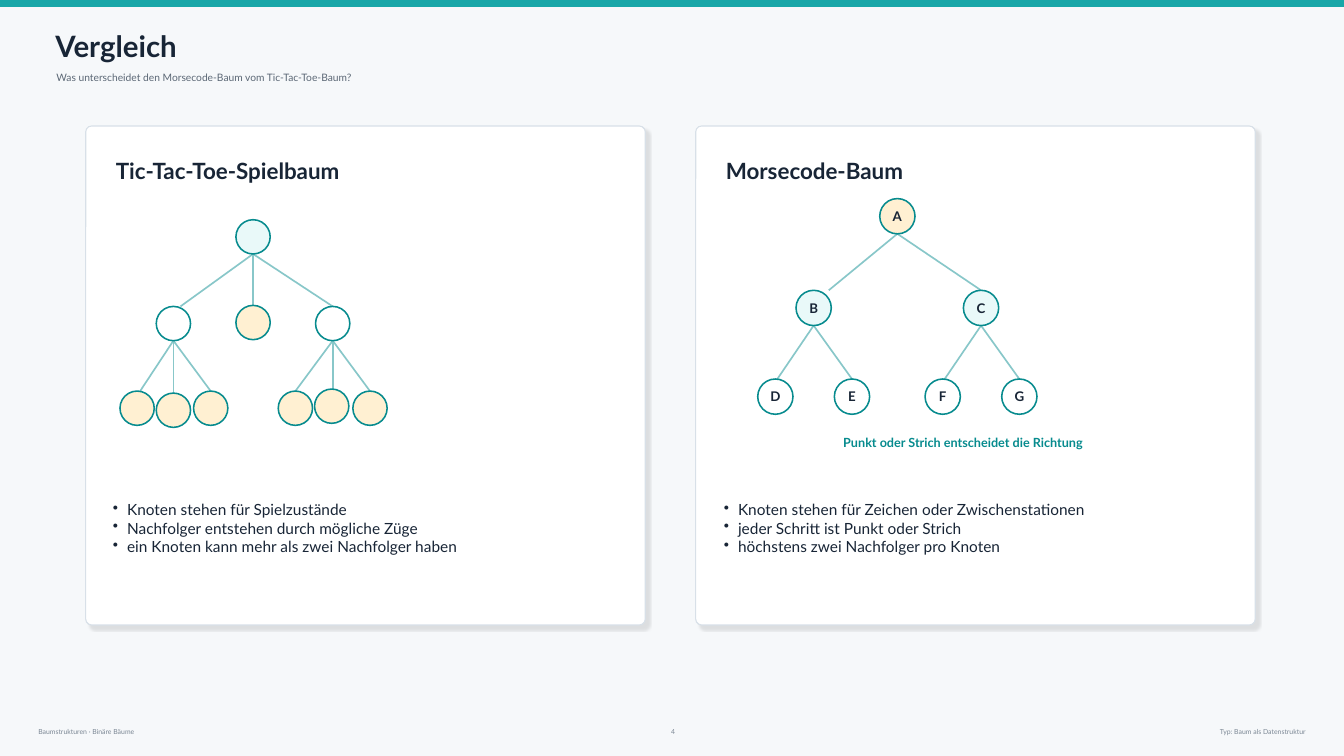
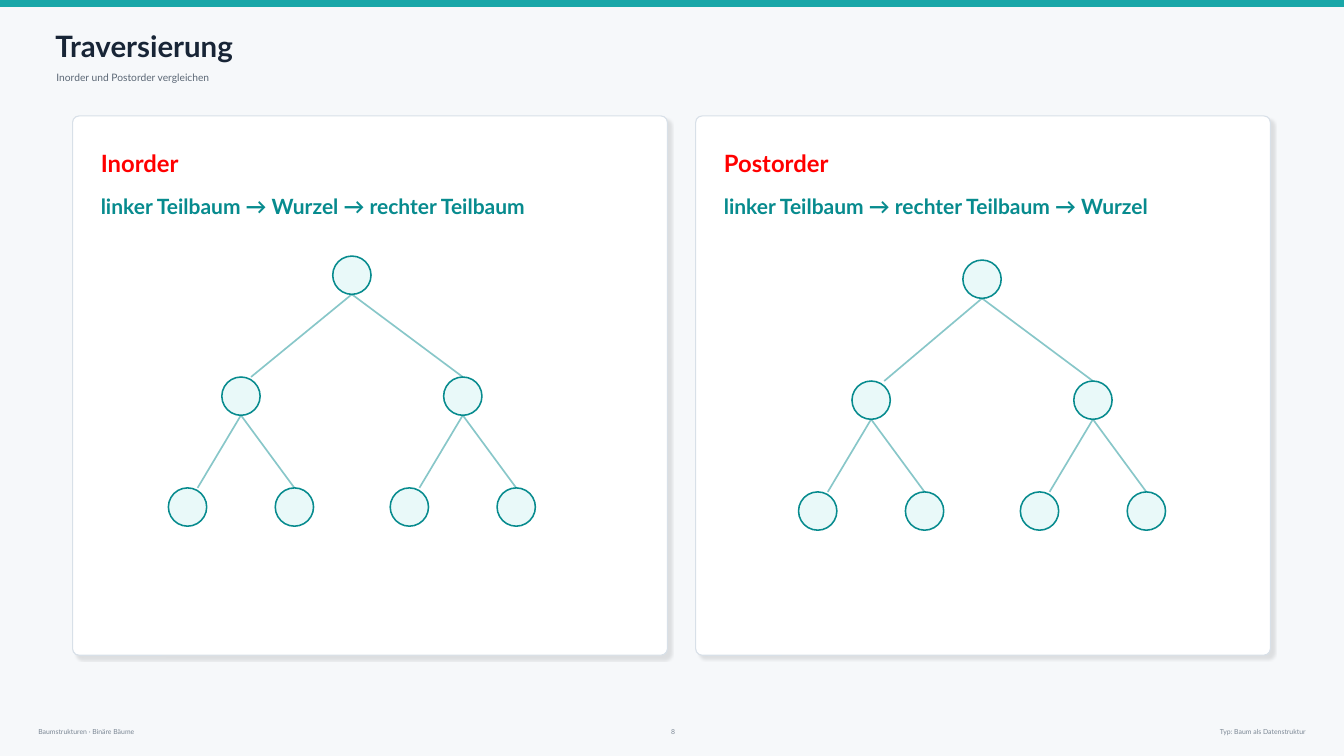
"""Build two slides that compare tree structures and traversal orders."""
from collections import namedtuple

from lxml import etree
from pptx import Presentation
from pptx.dml.color import RGBColor
from pptx.enum.shapes import MSO_CONNECTOR, MSO_SHAPE
from pptx.enum.text import MSO_ANCHOR, MSO_AUTO_SIZE, PP_ALIGN
from pptx.oxml.ns import qn
from pptx.util import Inches, Pt

LEFT, CENTER, RIGHT = PP_ALIGN.LEFT, PP_ALIGN.CENTER, PP_ALIGN.RIGHT
MIDDLE = MSO_ANCHOR.MIDDLE
NO_FIT = MSO_AUTO_SIZE.NONE
RECT, ROUNDED, OVAL = MSO_SHAPE.RECTANGLE, MSO_SHAPE.ROUNDED_RECTANGLE, MSO_SHAPE.OVAL
STRAIGHT = MSO_CONNECTOR.STRAIGHT

PAPER = RGBColor(0xF6, 0xF8, 0xFA)
TEAL = RGBColor(0x19, 0xA7, 0xA8)
DARK_TEAL = RGBColor(0x07, 0x8B, 0x8E)
EDGE = RGBColor(0x88, 0xC7, 0xC9)
MINT = RGBColor(0xE9, 0xF9, 0xF9)
CREAM = RGBColor(0xFF, 0xF0, 0xD2)
WHITE = RGBColor(0xFF, 0xFF, 0xFF)
BORDER = RGBColor(0xD8, 0xE0, 0xE8)
INK = RGBColor(0x18, 0x25, 0x36)
SLATE = RGBColor(0x5B, 0x67, 0x75)
GREY = RGBColor(0x7B, 0x87, 0x94)
RED = RGBColor(0xFF, 0x00, 0x00)

FONT = "Lato"
WIDTH, HEIGHT = 13.33, 7.5

Node = namedtuple("Node", "x y fill parent shift label", defaults=(None, 0, ""))


def write(tf, text, size=11, color=INK, bold=False, align=LEFT, bullet=False):
    """Fill a text frame with one paragraph for each line of text."""
    tf.word_wrap = True
    tf.auto_size = NO_FIT
    tf.vertical_anchor = MIDDLE
    tf.margin_left = tf.margin_right = tf.margin_top = tf.margin_bottom = 0
    for i, line in enumerate(text.split("\n")):
        p = tf.paragraphs[0] if i == 0 else tf.add_paragraph()
        p.alignment = align
        if bullet:
            pPr = p._p.get_or_add_pPr()
            pPr.set("marL", str(Inches(0.14)))
            pPr.set("indent", str(-Inches(0.14)))
            etree.SubElement(pPr, qn("a:buChar"), char="•")
        r = p.add_run()
        r.text = line
        r.font.name = FONT
        r.font.size = Pt(size)
        r.font.bold = bold
        r.font.color.rgb = color


class Deck:
    """Hold the shared style and the current slide."""

    def __init__(self):
        """Start an empty presentation with the shared background."""
        self.prs = Presentation()
        self.prs.slide_width = Inches(WIDTH)
        self.prs.slide_height = Inches(HEIGHT)
        fill = self.prs.slide_master.background.fill
        fill.solid()
        fill.fore_color.rgb = PAPER
        self.s = None

    def slide(self, title, subtitle, number):
        """Add a slide with band, title, subtitle and footer."""
        self.s = self.prs.slides.add_slide(self.prs.slide_layouts[5])
        self.shape(RECT, 0, 0, WIDTH, 0.06, TEAL, TEAL, 1)
        sp = self.s.shapes.title
        sp.left, sp.top = Inches(0.55), Inches(0.28)
        sp.width, sp.height = Inches(8.8), Inches(0.34)
        write(sp.text_frame, title, size=21, bold=True)
        self.text(subtitle, 0.56, 0.66, 8.8, 0.22, size=7.3, color=SLATE)
        for text, x, w, align in (
            ("Baumstrukturen · Binäre Bäume", 0.38, 3, LEFT),
            ("Typ: Baum als Datenstruktur", 11.3, 1.65, RIGHT),
            (number, 6.55, 0.25, CENTER),
        ):
            self.text(text, x, 7.18, w, 0.16, size=4.9, color=GREY, align=align)

    def text(self, text, x, y, w, h, **style):
        """Add a text box."""
        sp = self.s.shapes.add_textbox(Inches(x), Inches(y), Inches(w), Inches(h))
        write(sp.text_frame, text, **style)

    def shape(self, kind, x, y, w, h, fill, line, weight):
        """Add a filled, outlined shape without shadow."""
        sp = self.s.shapes.add_shape(kind, Inches(x), Inches(y), Inches(w), Inches(h))
        sp.shadow.inherit = False
        sp.fill.solid()
        sp.fill.fore_color.rgb = fill
        sp.line.color.rgb = line
        sp.line.width = Pt(weight)
        return sp

    def card(self, x, y, w, h):
        """Add a white rounded card with a soft shadow."""
        sp = self.shape(ROUNDED, x, y, w, h, WHITE, BORDER, 0.8)
        sp.adjustments[0] = 0.012
        effects = sp.element.spPr.find(qn("a:effectLst"))
        shadow = etree.SubElement(
            effects, qn("a:outerShdw"), blurRad=str(Pt(1.2)), dist=str(Pt(4)),
            dir=str(45 * 60000), algn="bl", rotWithShape="0")
        color = etree.SubElement(shadow, qn("a:srgbClr"), val="000000")
        etree.SubElement(color, qn("a:alpha"), val="10000")

    def edge(self, x1, y1, x2, y2):
        """Add a straight tree edge."""
        sp = self.s.shapes.add_connector(
            STRAIGHT, Inches(x1), Inches(y1), Inches(x2), Inches(y2))
        sp.line.color.rgb = EDGE
        sp.line.width = Pt(1.2)
        etree.SubElement(sp.element.spPr, qn("a:effectLst"))

    def tree(self, nodes, size):
        """Draw nodes, given by top centre, over the edges from their parents."""
        for node in nodes:
            if node.parent is not None:
                parent = nodes[node.parent]
                self.edge(parent.x, parent.y + size, node.x + node.shift, node.y)
        for node in nodes:
            sp = self.shape(OVAL, node.x - size / 2, node.y, size, size,
                            node.fill, DARK_TEAL, 1.1)
            if node.label:
                write(sp.text_frame, node.label, size=9.5, bold=True, align=CENTER)
                sp.text_frame.word_wrap = False

    def binary_tree(self, x, y, size, spreads, drops, shifts,
                    fills=(MINT, MINT, MINT), labels=" " * 7):
        """Draw a full binary tree of three levels below its root."""
        nodes = [Node(x, y, fills[0], label=labels[0].strip())]
        for i in range(1, 7):
            level = 0 if i < 3 else 1
            parent = (i - 1) // 2
            is_left = i % 2 == 1
            nodes.append(Node(
                nodes[parent].x + (-spreads[level] if is_left else spreads[level]),
                nodes[parent].y + drops[level], fills[level + 1], parent,
                shifts[level] if is_left else 0, labels[i].strip()))
        self.tree(nodes, size)


def comparison(deck):
    """Build the slide that compares a game tree and a Morse tree."""
    deck.slide("Vergleich",
               "Was unterscheidet den Morsecode-Baum vom Tic-Tac-Toe-Baum?", "4")
    for x, bullet_x, heading, points in (
        (0.85, 1.12, "Tic-Tac-Toe-Spielbaum",
         "Knoten stehen für Spielzustände\n"
         "Nachfolger entstehen durch mögliche Züge\n"
         "ein Knoten kann mehr als zwei Nachfolger haben"),
        (6.9, 7.18, "Morsecode-Baum",
         "Knoten stehen für Zeichen oder Zwischenstationen\n"
         "jeder Schritt ist Punkt oder Strich\n"
         "höchstens zwei Nachfolger pro Knoten"),
    ):
        deck.card(x, 1.25, 5.55, 4.95)
        deck.text(heading, x + 0.3, 1.55, 3.5, 0.28, size=16, bold=True)
        deck.text(points, bullet_x, 4.8, 4.9, 0.88, bullet=True)
    deck.tree([
        Node(2.51, 2.18, MINT),
        Node(1.72, 3.04, WHITE, 0, 0.07),
        Node(2.51, 3.03, CREAM, 0),
        Node(3.3, 3.04, WHITE, 0),
        Node(1.36, 3.88, CREAM, 1, 0.03),
        Node(1.72, 3.9, CREAM, 1),
        Node(2.09, 3.88, CREAM, 1),
        Node(2.93, 3.88, CREAM, 3),
        Node(3.29, 3.86, CREAM, 3, 0.01),
        Node(3.67, 3.88, CREAM, 3),
    ], 0.34)
    deck.binary_tree(8.9, 1.97, 0.35, (0.83, 0.38), (0.91, 0.88), (0.15, 0.02),
                     (CREAM, MINT, WHITE), "ABCDEFG")
    deck.text("Punkt oder Strich entscheidet die Richtung", 7.55, 4.28, 4, 0.22,
              size=9, color=DARK_TEAL, bold=True, align=CENTER)


def traversal(deck):
    """Build the slide that compares inorder and postorder."""
    deck.slide("Traversierung", "Inorder und Postorder vergleichen", "8")
    for x, w, heading, order, root_x, root_y, shift in (
        (0.72, 5.9, "Inorder", "linker Teilbaum → Wurzel → rechter Teilbaum",
         3.49, 2.54, 0.1),
        (6.9, 5.7, "Postorder", "linker Teilbaum → rechter Teilbaum → Wurzel",
         9.74, 2.58, 0.13),
    ):
        deck.card(x, 1.15, w, 5.35)
        deck.text(heading, x + 0.28, 1.48, 1.9, 0.28, size=17, color=RED, bold=True)
        deck.text(order, x + 0.28, 1.9, 5.2, 0.28, size=15, color=DARK_TEAL, bold=True)
        deck.binary_tree(root_x, root_y, 0.38, (1.1, 0.53), (1.2, 1.1), (shift, 0.1))


def main():
    """Build and save the presentation."""
    deck = Deck()
    comparison(deck)
    traversal(deck)
    deck.prs.save("out.pptx")


if __name__ == "__main__":
    main()
